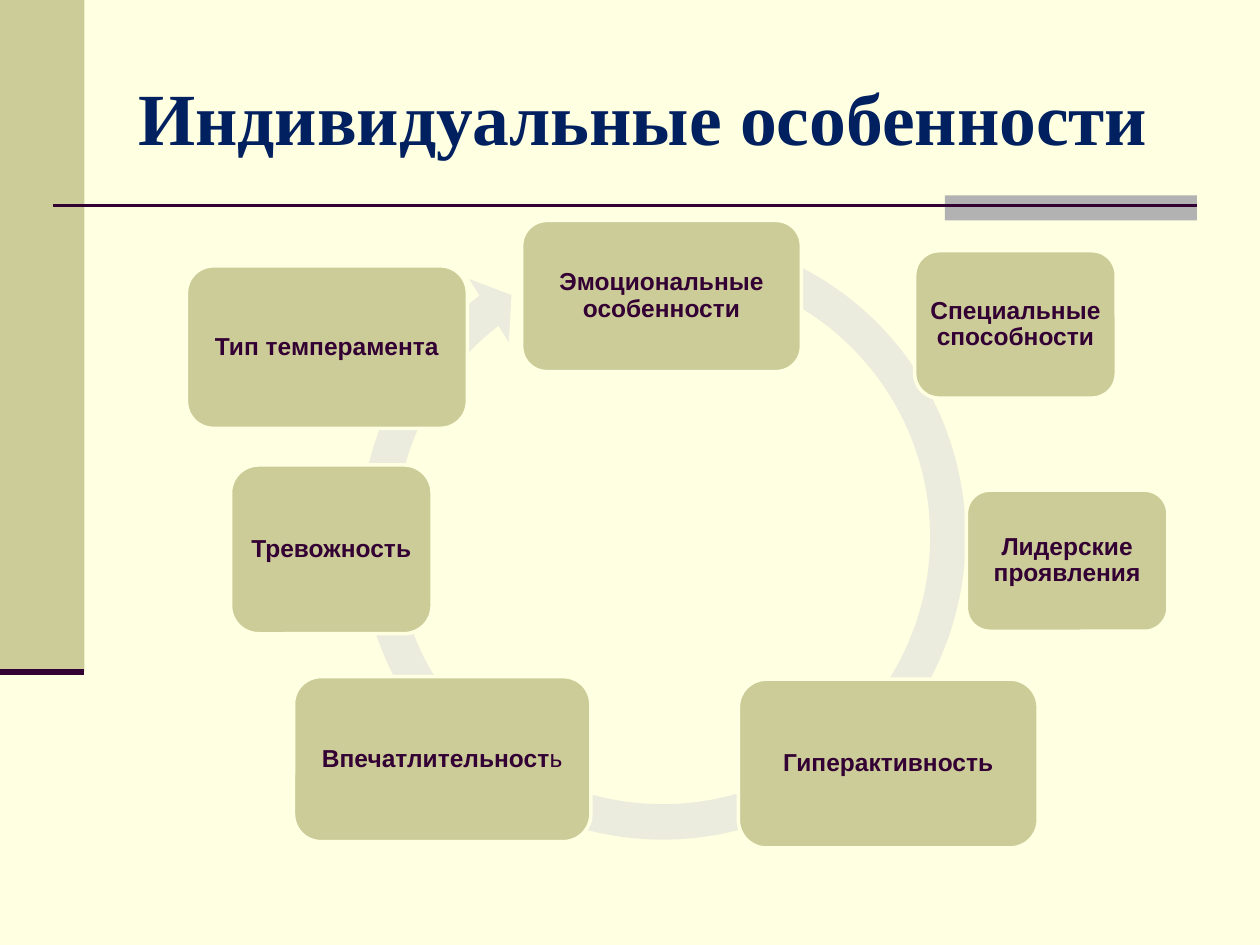
from dataclasses import dataclass

from lxml import etree
from pptx import Presentation
from pptx.dml.color import RGBColor
from pptx.enum.shapes import MSO_CONNECTOR, MSO_SHAPE
from pptx.enum.text import MSO_ANCHOR, PP_ALIGN
from pptx.oxml.ns import qn
from pptx.util import Inches, Pt

RECTANGLE = MSO_SHAPE.RECTANGLE
ROUNDED = MSO_SHAPE.ROUNDED_RECTANGLE
CIRCULAR_ARROW = MSO_SHAPE.CIRCULAR_ARROW
STRAIGHT = MSO_CONNECTOR.STRAIGHT
MIDDLE = MSO_ANCHOR.MIDDLE
LEFT, CENTER = PP_ALIGN.LEFT, PP_ALIGN.CENTER

CREAM = RGBColor(0xFF, 0xFF, 0xE1)
OLIVE = RGBColor(0xCC, 0xCC, 0x99)
PALE_OLIVE = RGBColor(0xEC, 0xEC, 0xDE)
GRAY = RGBColor(0xB2, 0xB2, 0xB2)
PLUM = RGBColor(0x33, 0x00, 0x33)
NAVY = RGBColor(0x00, 0x20, 0x60)


@dataclass
class Trait:
    text: str
    left: float
    top: float
    width: float
    height: float
    plain_ending: str = ""


TRAITS = [
    Trait("Эмоциональные особенности", 4.14, 1.75, 2.22, 1.2),
    Trait("Специальные способности", 7.26, 1.99, 1.6, 1.17),
    Trait("Лидерские проявления", 7.67, 3.89, 1.6, 1.12),
    Trait("Гиперактивность", 5.86, 5.39, 2.38, 1.34),
    Trait("Впечатлительност", 2.33, 5.37, 2.36, 1.31, plain_ending="ь"),
    Trait("Тревожность", 1.83, 3.69, 1.6, 1.34),
    Trait("Тип темперамента", 1.48, 2.11, 2.23, 1.29),
]


def add_block(page, kind, left: float, top: float, width: float, height: float,
              fill: RGBColor, outline: RGBColor | None = None):
    block = page.shapes.add_shape(
        kind, Inches(left), Inches(top), Inches(width), Inches(height))
    block.shadow.inherit = False
    block.fill.solid()
    block.fill.fore_color.rgb = fill
    if outline is None:
        block.line.fill.background()
    else:
        block.line.color.rgb = outline
        block.line.width = Pt(2)
    return block


def add_rule(page, left: float, right: float, top: float, weight: float) -> None:
    rule = page.shapes.add_connector(
        STRAIGHT, Inches(left), Inches(top), Inches(right), Inches(top))
    rule.line.color.rgb = PLUM
    rule.line.width = Pt(weight)
    etree.SubElement(rule._element.spPr, qn("a:effectLst"))


def write_text(box, text: str, *, font: str, size: float, color: RGBColor,
               align=LEFT, spacing: float = 1.0, inset: float = 0.1,
               plain_ending: str = "") -> None:
    """Write bold text, optionally closed by letters in regular weight."""
    frame = box.text_frame
    frame.word_wrap = True
    frame.vertical_anchor = MIDDLE
    frame.margin_left = frame.margin_right = Inches(inset)
    frame.margin_top = frame.margin_bottom = Inches(inset)
    para = frame.paragraphs[0]
    para.alignment = align
    para.line_spacing = spacing
    for part, bold in ((text, True), (plain_ending, False)):
        if part:
            span = para.add_run()
            span.text = part
            span.font.name = font
            span.font.size = Pt(size)
            span.font.bold = bold
            span.font.color.rgb = color


def add_trait(page, trait: Trait) -> None:
    box = add_block(page, ROUNDED, trait.left, trait.top, trait.width,
                    trait.height, OLIVE, outline=CREAM)
    write_text(box, trait.text, font="Arial", size=14, color=PLUM, align=CENTER,
               spacing=0.9, inset=0.05, plain_ending=trait.plain_ending)


def main() -> None:
    deck = Presentation()
    deck.slide_width, deck.slide_height = Inches(10), Inches(7.5)
    page = deck.slides.add_slide(deck.slide_layouts[6])
    page.background.fill.solid()
    page.background.fill.fore_color.rgb = CREAM

    add_block(page, RECTANGLE, 0, 0, 0.67, 5.33, OLIVE)
    add_block(page, RECTANGLE, 7.5, 1.55, 2, 0.2, GRAY)
    add_rule(page, 0.42, 9.5, 1.63, 1.5)
    add_rule(page, 0, 0.67, 5.33, 3.5)

    title = page.shapes.add_textbox(Inches(1), Inches(0.3), Inches(8.5), Inches(1.25))
    write_text(title, "Индивидуальные особенности",
               font="Times New Roman", size=42, color=NAVY)

    cycle = add_block(page, CIRCULAR_ARROW, 2.7, 1.7, 5.12, 5.12, PALE_OLIVE)
    # Thickness, head angle, end angle, start angle, head width
    for index, value in enumerate((0.055, 3.307, 139.468, 172.829, 0.058)):
        cycle.adjustments[index] = value

    for trait in TRAITS:
        add_trait(page, trait)
    deck.save("out.pptx")


if __name__ == "__main__":
    main()
